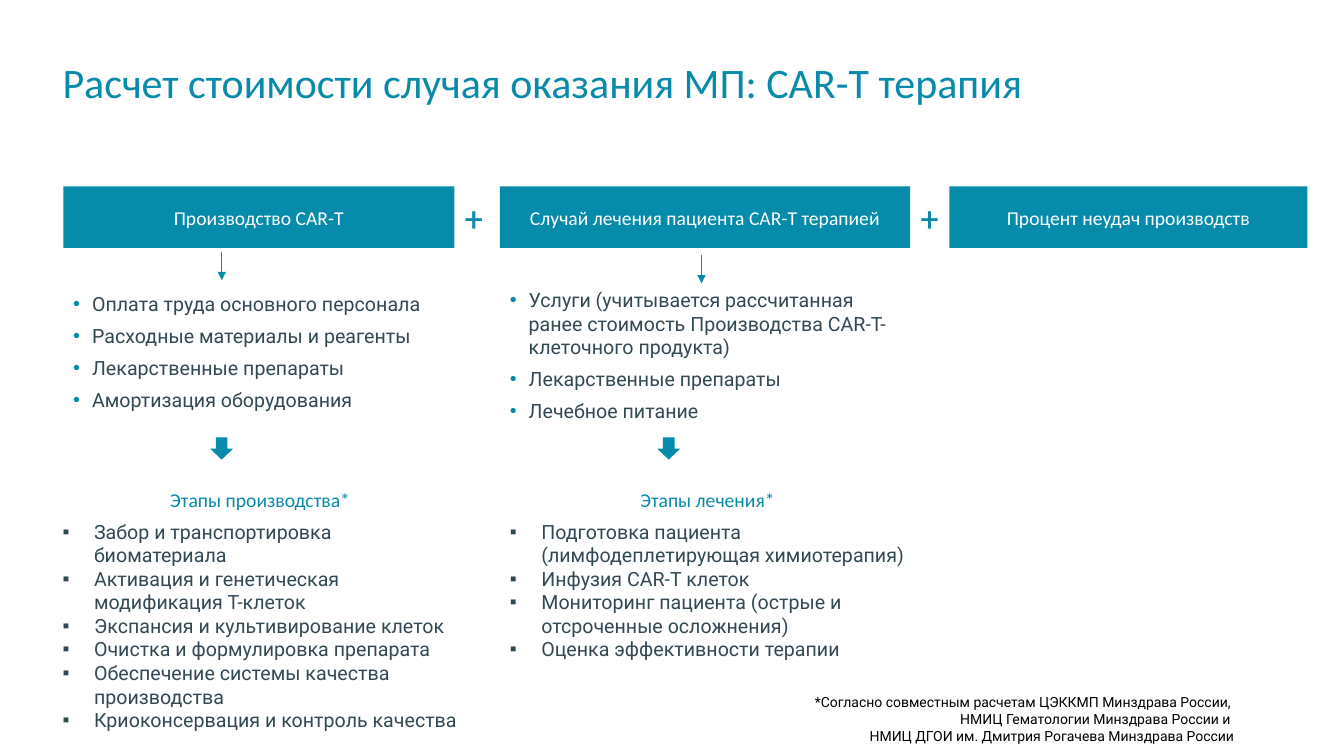
from lxml import etree
from pptx import Presentation
from pptx.dml.color import RGBColor
from pptx.enum.shapes import MSO_CONNECTOR, MSO_SHAPE
from pptx.enum.text import MSO_ANCHOR, PP_ALIGN
from pptx.oxml.ns import qn
from pptx.util import Pt

RECTANGLE, DOWN_ARROW = MSO_SHAPE.RECTANGLE, MSO_SHAPE.DOWN_ARROW
STRAIGHT = MSO_CONNECTOR.STRAIGHT
TOP, MIDDLE = MSO_ANCHOR.TOP, MSO_ANCHOR.MIDDLE
LEFT, CENTER, RIGHT = PP_ALIGN.LEFT, PP_ALIGN.CENTER, PP_ALIGN.RIGHT

TEAL, ACCENT, SLATE = "068BAA", "088AAB", "324953"
WHITE, BLACK = "FFFFFF", "000000"
HEADING_FONT, BODY_FONT = "Calibri", "Roboto"

TITLE = "Расчет стоимости случая оказания МП: CAR-T терапия"
HEADERS = [
    ("Производство CAR-T", 45.2, 279.4),
    ("Случай лечения пациента CAR-T терапией", 357.1, 293),
    ("Процент неудач производств", 678.2, 255.6),
]
COLUMNS = [
    {
        "costs": [
            "Оплата труда основного персонала",
            "Расходные материалы и реагенты",
            "Лекарственные препараты",
            "Амортизация оборудования",
        ],
        "costs_box": (45.2, 205.2, 279.4, 121),
        "thin_arrow": (158.4, 180),
        "block_arrow_left": 150,
        "stages_title": "Этапы производства*",
        "stages": [
            "Забор и транспортировка биоматериала",
            "Активация и генетическая модификация T-клеток",
            "Экспансия и культивирование клеток",
            "Очистка и формулировка препарата",
            "Обеспечение системы качества производства",
            "Криоконсервация и контроль качества",
        ],
        "stages_box": (37.6, 344.9, 296.6, 182.9),
    },
    {
        "costs": [
            "Услуги (учитывается рассчитанная ранее стоимость "
            "Производства CAR-T-клеточного продукта)",
            "Лекарственные препараты",
            "Лечебное питание",
        ],
        "costs_box": (357.1, 202.3, 295.2, 121),
        "thin_arrow": (501.1, 182.2),
        "block_arrow_left": 469.4,
        "stages_title": "Этапы лечения*",
        "stages": [
            "Подготовка пациента (лимфодеплетирующая химиотерапия)",
            "Инфузия CAR-T клеток",
            "Мониторинг пациента (острые и отсроченные осложнения)",
            "Оценка эффективности терапии",
        ],
        "stages_box": (357.1, 344.9, 296.6, 131.8),
    },
]
FOOTNOTE = [
    "*Согласно совместным расчетам ЦЭККМП Минздрава России, ",
    "НМИЦ Гематологии Минздрава России и ",
    "НМИЦ ДГОИ им. Дмитрия Рогачева Минздрава России",
]

HEADER_TOP, HEADER_HEIGHT = 133.2, 43.9
PLUS_TOP, PLUS_WIDTH, PLUS_HEIGHT = 137.5, 28, 36
THIN_ARROW_LENGTH = 20.2
BLOCK_ARROW_TOP, BLOCK_ARROW_WIDTH, BLOCK_ARROW_HEIGHT = 312.5, 16.6, 15.8

presentation = Presentation()
presentation.slide_width, presentation.slide_height = Pt(960), Pt(540)
slide = presentation.slides.add_slide(presentation.slide_layouts[6])


def rgb(color):
    return RGBColor.from_string(color)


def set_bullet(paragraph, char, color, indent):
    properties = paragraph._p.get_or_add_pPr()
    properties.set("marL", str(Pt(indent)))
    properties.set("indent", str(-Pt(indent)))
    bullet_color = etree.SubElement(properties, qn("a:buClr"))
    etree.SubElement(bullet_color, qn("a:srgbClr"), val=color)
    etree.SubElement(properties, qn("a:buFont"), typeface="Arial")
    etree.SubElement(properties, qn("a:buChar"), char=char)


def write(frame, lines, size, font, color, align=LEFT, after=0, bullet=None):
    for line in lines:
        first = frame.paragraphs[0]
        paragraph = frame.add_paragraph() if first.text else first
        if bullet:
            set_bullet(paragraph, *bullet)
        paragraph.text = line
        paragraph.alignment = align
        paragraph.space_after = Pt(after)
        paragraph.font.size = Pt(size)
        paragraph.font.name = font
        paragraph.font.color.rgb = rgb(color)


def add_text_frame(box, anchor=TOP, wrap=True):
    frame = slide.shapes.add_textbox(*map(Pt, box)).text_frame
    frame.word_wrap = wrap
    frame.vertical_anchor = anchor
    return frame


def add_filled(preset, box, color):
    shape = slide.shapes.add_shape(preset, *map(Pt, box))
    shape.shadow.inherit = False
    shape.fill.solid()
    shape.fill.fore_color.rgb = rgb(color)
    shape.line.fill.background()
    return shape


def add_thin_arrow(x, top):
    arrow = slide.shapes.add_connector(
        STRAIGHT, Pt(x), Pt(top), Pt(x), Pt(top + THIN_ARROW_LENGTH))
    arrow.line.color.rgb = rgb(TEAL)
    arrow.line.width = Pt(1)
    etree.SubElement(arrow.line._get_or_add_ln(), qn("a:tailEnd"), type="triangle")
    etree.SubElement(arrow._element.spPr, qn("a:effectLst"))


title_frame = add_text_frame((37.6, 0, 830, 117.4), MIDDLE)
write(title_frame, [TITLE], 30, HEADING_FONT, ACCENT)

for index, (label, left, width) in enumerate(HEADERS):
    header = add_filled(RECTANGLE, (left, HEADER_TOP, width, HEADER_HEIGHT), TEAL)
    header.text_frame.word_wrap = True
    header.text_frame.vertical_anchor = MIDDLE
    write(header.text_frame, [label], 14, HEADING_FONT, WHITE, CENTER)
    if index < len(HEADERS) - 1:
        plus_frame = add_text_frame(
            (left + width, PLUS_TOP, PLUS_WIDTH, PLUS_HEIGHT), wrap=False)
        write(plus_frame, ["+"], 24, BODY_FONT, ACCENT)

for column in COLUMNS:
    add_thin_arrow(*column["thin_arrow"])
    write(add_text_frame(column["costs_box"]), column["costs"], 14, BODY_FONT,
          SLATE, after=6, bullet=("•", TEAL, 13.5))
    add_filled(DOWN_ARROW, (column["block_arrow_left"], BLOCK_ARROW_TOP,
                            BLOCK_ARROW_WIDTH, BLOCK_ARROW_HEIGHT), ACCENT)
    stages_frame = add_text_frame(column["stages_box"])
    write(stages_frame, [column["stages_title"]], 14, HEADING_FONT, ACCENT,
          CENTER, after=6)
    write(stages_frame, column["stages"], 14, BODY_FONT, SLATE,
          bullet=("▪", SLATE, 22.5))

write(add_text_frame((338.4, 491.8, 550, 43.6)), FOOTNOTE, 10, BODY_FONT, BLACK, RIGHT)

presentation.save("out.pptx")
